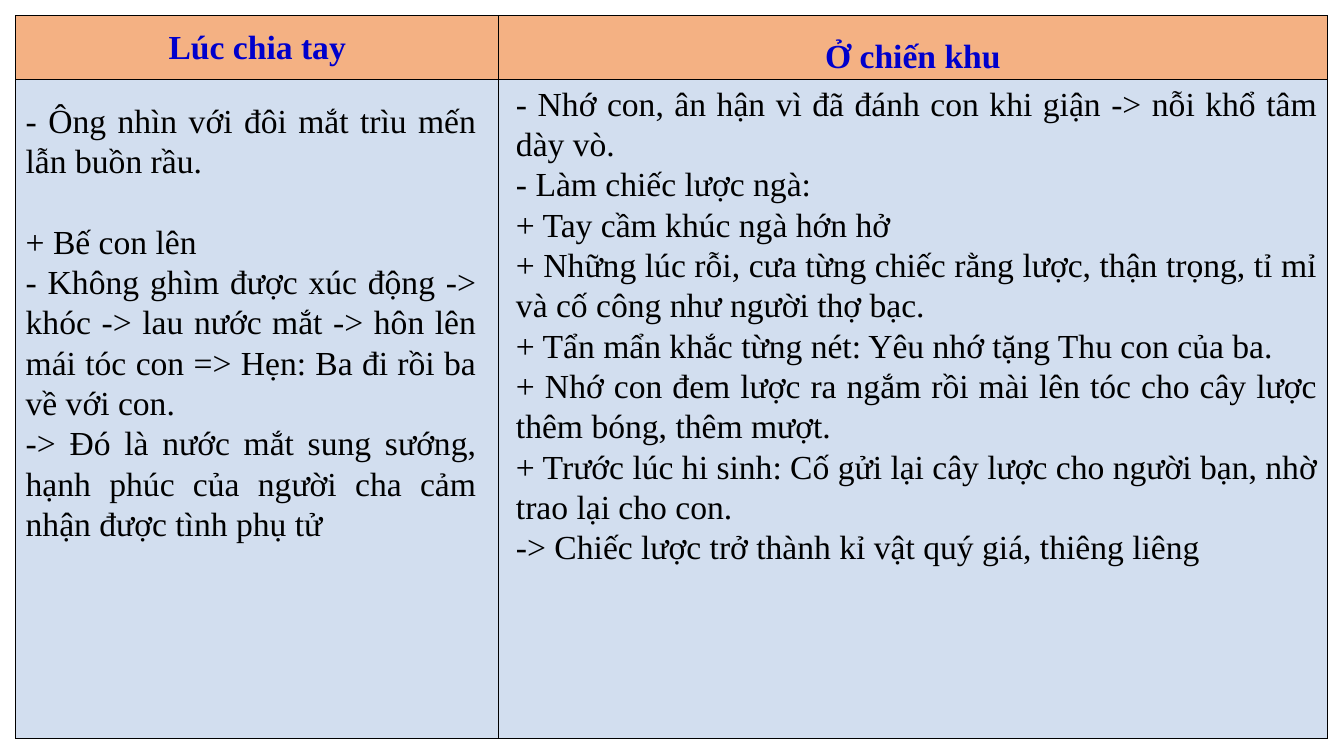
from lxml.etree import SubElement
from pptx import Presentation
from pptx.dml.color import RGBColor
from pptx.enum.text import MSO_ANCHOR, PP_ALIGN
from pptx.oxml.ns import qn
from pptx.util import Pt

PX = 9525
COLORS = {"header": "F4B183", "body": "D2DEEF", "heading": "0000CC", "text": "000000", "border": "000000"}
COLUMN_WIDTHS = [460, 789]
ROW_HEIGHTS = [61, 627]
HEADINGS = [("Lúc chia tay", 1.0), ("Ở chiến khu", 1.5)]
FAREWELL = [
    "- Ông nhìn với đôi mắt trìu mến lẫn buồn rầu.",
    "+ Bế con lên",
    "- Không ghìm được xúc động -> khóc -> lau nước mắt -> hôn lên mái tóc con => Hẹn: Ba đi rồi ba về với con.",
    "-> Đó là nước mắt sung sướng, hạnh phúc của người cha cảm nhận được tình phụ tử",
]
WAR_ZONE = [
    "- Nhớ con, ân hận vì đã đánh con khi giận -> nỗi khổ tâm dày vò.",
    "- Làm chiếc lược ngà:",
    "+ Tay cầm khúc ngà hớn hở",
    "+ Những lúc rỗi, cưa từng chiếc rằng lược, thận trọng, tỉ mỉ và cố công như người thợ bạc.",
    "+ Tẩn mẩn khắc từng nét: Yêu nhớ tặng Thu con của ba.",
    "+ Nhớ con đem lược ra ngắm rồi mài lên tóc cho cây lược thêm bóng, thêm mượt.",
    "+ Trước lúc hi sinh: Cố gửi lại cây lược cho người bạn, nhờ trao lại cho con.",
    "-> Chiếc lược trở thành kỉ vật quý giá, thiêng liêng",
]
# Box in px, lines, and the gap in points after the first line
NOTES = [
    ((15, 90, 448, 436), FAREWELL, 29),
    ((482, 74, 782, 475), WAR_ZONE, 0),
]


def write(paragraph, text, color, bold, layout):
    run = paragraph.add_run()
    run.text = text
    for name, value in {"name": "Times New Roman", "size": Pt(24), "bold": bold}.items():
        setattr(run.font, name, value)
    run.font.color.rgb = RGBColor.from_string(COLORS[color])
    for name, value in layout.items():
        setattr(paragraph, name, value)


def paint(cell, color):
    """Give the cell black 1 pt borders on all sides and a solid fill."""
    properties = cell._tc.get_or_add_tcPr()
    for side in ("a:lnL", "a:lnR", "a:lnT", "a:lnB"):
        line = SubElement(properties, qn(side), w=str(Pt(1)))
        solid = SubElement(line, qn("a:solidFill"))
        SubElement(solid, qn("a:srgbClr"), val=COLORS["border"])
    cell.fill.solid()
    cell.fill.fore_color.rgb = RGBColor.from_string(COLORS[color])


presentation = Presentation()
presentation.slide_width = 1280 * PX
presentation.slide_height = 720 * PX
slide = presentation.slides.add_slide(presentation.slide_layouts[6])

comparison = slide.shapes.add_table(
    2, 2, 15 * PX, 15 * PX, sum(COLUMN_WIDTHS) * PX, sum(ROW_HEIGHTS) * PX
).table
for column, width in zip(comparison.columns, COLUMN_WIDTHS):
    column.width = width * PX
for row, height, color in zip(comparison.rows, ROW_HEIGHTS, ("header", "body")):
    row.height = height * PX
    for cell in row.cells:
        paint(cell, color)

for cell, (heading, spacing) in zip(comparison.rows[0].cells, HEADINGS):
    for name, value in {"vertical_anchor": MSO_ANCHOR.MIDDLE, "margin_top": 0, "margin_bottom": 0}.items():
        setattr(cell, name, value)
    write(cell.text_frame.paragraphs[0], heading, "heading", True,
          {"alignment": PP_ALIGN.CENTER, "line_spacing": spacing})

for box, lines, first_gap in NOTES:
    frame = slide.shapes.add_textbox(*(length * PX for length in box)).text_frame
    frame.word_wrap = True
    for index, line in enumerate(lines):
        paragraph = frame.add_paragraph() if index else frame.paragraphs[0]
        write(paragraph, line, "text", False,
              {"alignment": PP_ALIGN.JUSTIFY, "space_after": Pt(0 if index else first_gap)})

presentation.save("out.pptx")
